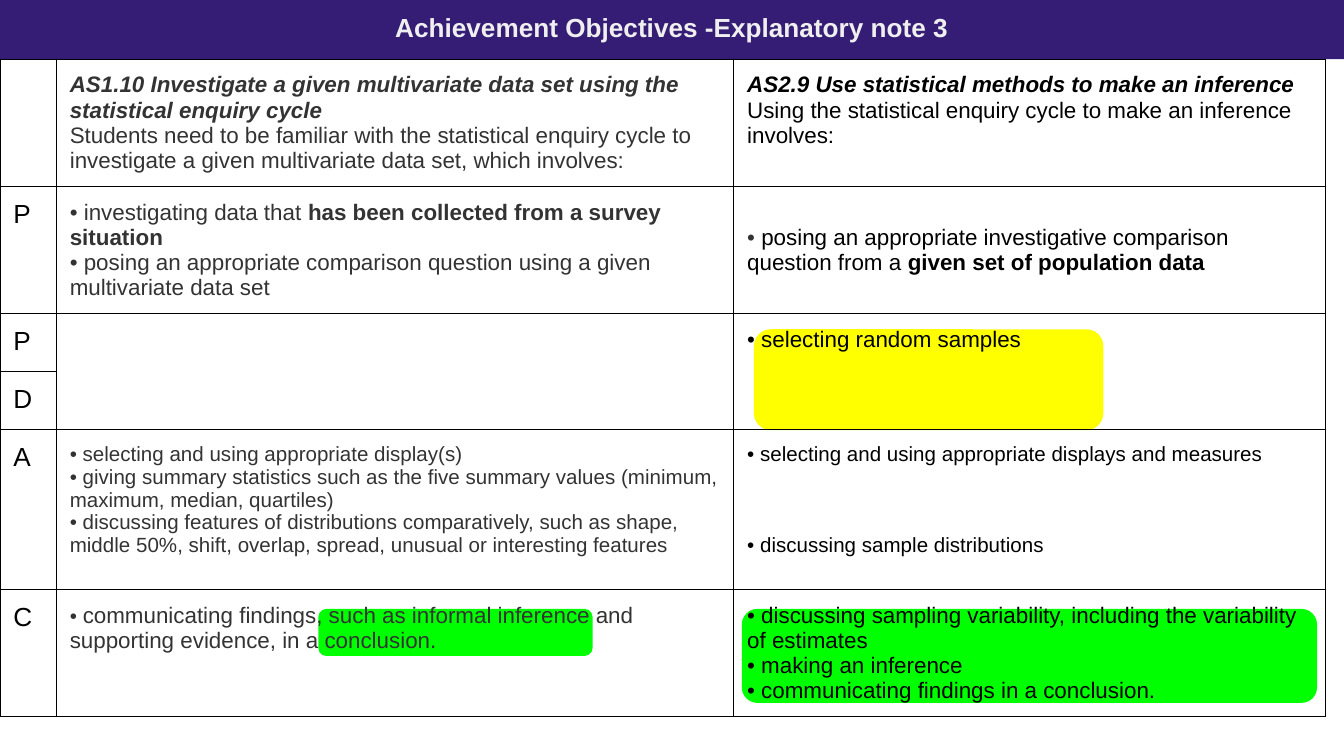
from dataclasses import dataclass

from lxml import etree
from pptx import Presentation
from pptx.dml.color import RGBColor
from pptx.enum.shapes import MSO_SHAPE as Preset
from pptx.enum.text import MSO_ANCHOR as Anchor, PP_ALIGN as Align
from pptx.oxml.ns import qn
from pptx.util import Pt

FONT = "Arial"
BLACK, GREY, GREEN, YELLOW = "000000", "333333", "00FF00", "FFFF00"
PURPLE, PALE = "351C75", "EFEFEF"
INSET = 7.2


@dataclass
class Span:
    text: str
    color: str = GREY
    size: float = 12
    bold: bool = False
    italic: bool = False


@dataclass
class Para:
    spans: list[Span]
    space_before: float = 0


@dataclass
class Entry:
    row: int
    col: int
    paras: list[Para]
    top: float = INSET


@dataclass
class Block:
    preset: Preset
    left: float
    top: float
    width: float
    height: float
    fill: str


def rgb(value: str) -> RGBColor:
    return RGBColor.from_string(value)


def add_text(paragraph, text: str, *, size: float, color: str,
             bold: bool = False, italic: bool = False) -> None:
    run = paragraph.add_run()
    run.text = text
    font = run.font
    font.name, font.size = FONT, Pt(size)
    font.bold, font.italic = bold, italic
    font.color.rgb = rgb(color)


def add_block(slide, block: Block):
    shape = slide.shapes.add_shape(block.preset, Pt(block.left), Pt(block.top),
                                   Pt(block.width), Pt(block.height))
    shape.shadow.inherit = False
    shape.fill.solid()
    shape.fill.fore_color.rgb = rgb(block.fill)
    shape.line.fill.background()
    return shape


def set_borders(cell, color: str, width: float) -> None:
    props = cell._tc.get_or_add_tcPr()
    for index, side in enumerate(("a:lnL", "a:lnR", "a:lnT", "a:lnB")):
        line = etree.Element(qn(side), w=str(Pt(width)))
        fill = etree.SubElement(line, qn("a:solidFill"))
        etree.SubElement(fill, qn("a:srgbClr"), val=color)
        props.insert(index, line)


def fill_entry(table, entry: Entry) -> None:
    cell = table.cell(entry.row, entry.col)
    cell.margin_left = cell.margin_right = cell.margin_bottom = Pt(INSET)
    cell.margin_top = Pt(entry.top)
    frame = cell.text_frame
    for index, para in enumerate(entry.paras):
        paragraph = frame.add_paragraph() if index else frame.paragraphs[0]
        if para.space_before:
            paragraph.space_before = Pt(para.space_before)
        for span in para.spans:
            add_text(paragraph, span.text, size=span.size, color=span.color,
                     bold=span.bold, italic=span.italic)


def lines(*texts: str, color: str = GREY, size: float = 12) -> list[Para]:
    return [Para([Span(text, color, size)]) for text in texts]


def standard(heading: str, intro: str, color: str) -> list[Para]:
    return [Para([Span(heading, color, bold=True, italic=True)]),
            Para([Span(intro, color)])]


# Content of the comparison table
STAGES = ["P", "P", "D", "A", "C"]
COLUMNS = [30.2, 362.9, 316.8]
ROWS = [38.2, 59, 31, 31, 85.7, 61.9]
ENTRIES = [
    Entry(0, 1, standard(
        "AS1.10 Investigate a given multivariate data set using the statistical enquiry cycle",
        "Students need to be familiar with the statistical enquiry cycle to investigate "
        "a given multivariate data set, which involves:", GREY)),
    Entry(0, 2, standard(
        "AS2.9 Use statistical methods to make an inference",
        "Using the statistical enquiry cycle to make an inference involves:", BLACK)),
    Entry(1, 1, [
        Para([Span("• investigating data that "),
              Span("has been collected from a survey situation", bold=True)]),
        *lines("• posing an appropriate comparison question using a given multivariate data set")]),
    Entry(1, 2, [
        Para([Span("• "),
              Span("posing an appropriate investigative comparison question from a", BLACK),
              Span(" given set of population data", BLACK, bold=True)])], top=20.6),
    Entry(2, 2, lines("• selecting random samples", color=BLACK)),
    Entry(4, 1, lines(
        "• selecting and using appropriate display(s)",
        "• giving summary statistics such as the five summary values "
        "(minimum, maximum, median, quartiles)",
        "• discussing features of distributions comparatively, such as shape, middle 50%, "
        "shift, overlap, spread, unusual or interesting features", size=11)),
    Entry(4, 2, [
        *lines("• selecting and using appropriate displays and measures", color=BLACK, size=11),
        Para([Span("• discussing sample distributions", BLACK, 11)], space_before=36.5)]),
    Entry(5, 1, [
        Para([Span("• ", size=11),
              Span("communicating findings, such as informal inference and supporting "
                   "evidence, in a conclusion.")])]),
    Entry(5, 2, lines(
        "• discussing sampling variability, including the variability of estimates",
        "• making an inference",
        "• communicating findings in a conclusion.", color=BLACK)),
]
ENTRIES += [Entry(row, 0, lines(stage, color=BLACK, size=14))
            for row, stage in enumerate(STAGES, start=1)]

# Highlights and title bar, from back to front
INFORMAL = Block(Preset.ROUNDED_RECTANGLE, 170.6, 326.2, 146.9, 25.2, GREEN)
SAMPLES = Block(Preset.ROUNDED_RECTANGLE, 403.9, 176.4, 187.2, 54, YELLOW)
TITLE_BAR = Block(Preset.RECTANGLE, 0, -2.9, 720, 34.6, PURPLE)
VARIABILITY = Block(Preset.ROUNDED_RECTANGLE, 397.4, 326.2, 308.2, 50.4, GREEN)


def add_title(slide) -> None:
    frame = add_block(slide, TITLE_BAR).text_frame
    frame.word_wrap = True
    frame.vertical_anchor = Anchor.MIDDLE
    frame.margin_left = frame.margin_right = Pt(INSET)
    frame.margin_top = frame.margin_bottom = Pt(INSET)
    heading = frame.paragraphs[0]
    heading.alignment = Align.CENTER
    add_text(heading, "Achievement Objectives -Explanatory note 3",
             size=14, color=PALE, bold=True)


def add_comparison(slide) -> None:
    table = slide.shapes.add_table(len(ROWS), len(COLUMNS), Pt(0), Pt(31.7),
                                   Pt(sum(COLUMNS)), Pt(sum(ROWS))).table
    table.first_row = table.horz_banding = False
    for column, width in zip(table.columns, COLUMNS):
        column.width = Pt(width)
    for row, height in zip(table.rows, ROWS):
        row.height = Pt(height)
    for cell in table.iter_cells():
        cell.fill.background()
        set_borders(cell, BLACK, 0.75)
    for col in (1, 2):
        table.cell(2, col).merge(table.cell(3, col))
    for entry in ENTRIES:
        fill_entry(table, entry)


def main() -> None:
    deck = Presentation()
    deck.slide_width, deck.slide_height = Pt(720), Pt(405)
    slide = deck.slides.add_slide(deck.slide_layouts[6])
    add_block(slide, INFORMAL)
    add_block(slide, SAMPLES)
    add_title(slide)
    add_block(slide, VARIABILITY)
    add_comparison(slide)
    deck.save("out.pptx")


if __name__ == "__main__":
    main()
